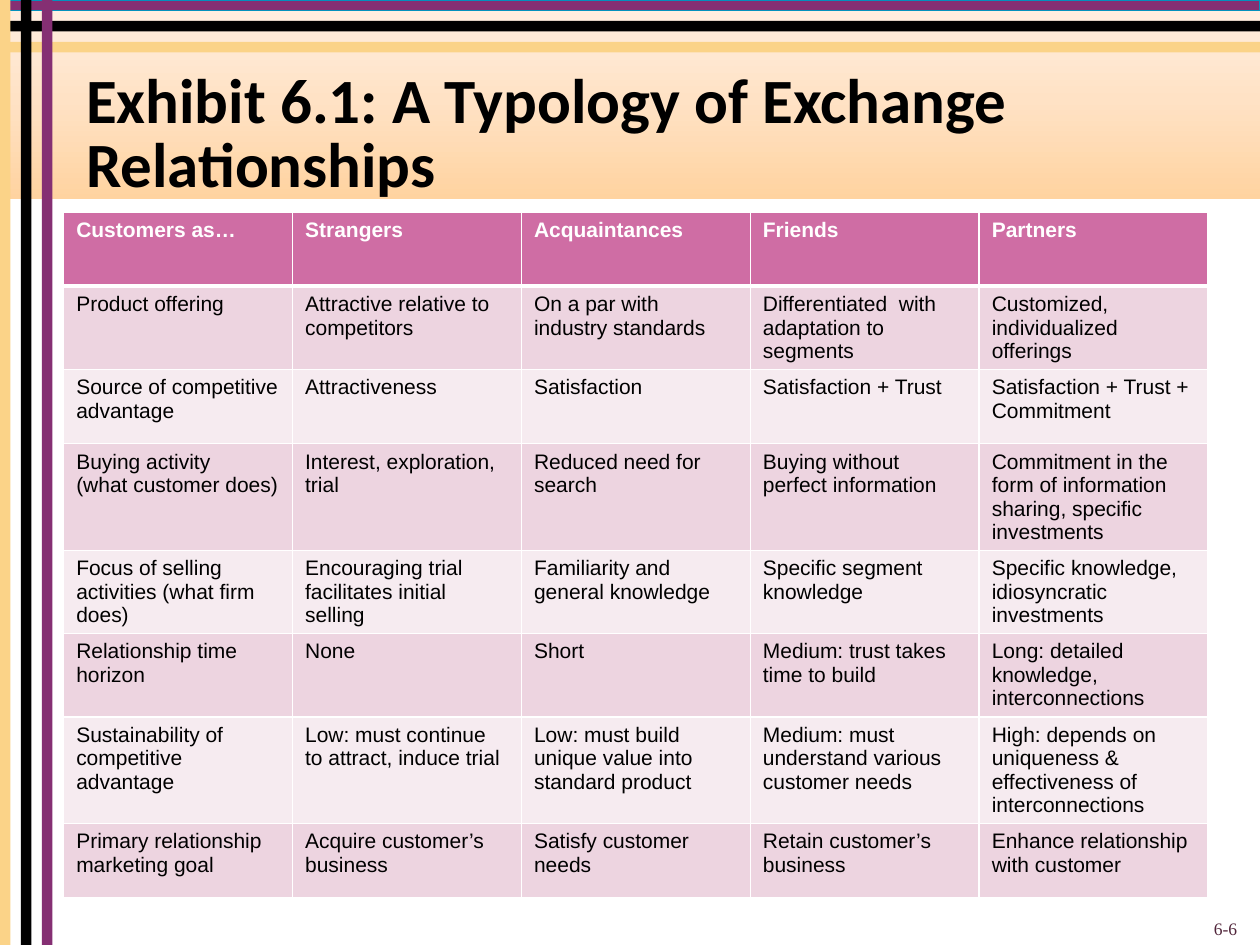
from copy import deepcopy
from dataclasses import dataclass
from typing import Optional

from lxml.etree import SubElement
from pptx import Presentation
from pptx.dml.color import RGBColor
from pptx.enum.text import MSO_ANCHOR, MSO_AUTO_SIZE, PP_ALIGN
from pptx.enum.shapes import MSO_SHAPE
from pptx.oxml.ns import qn
from pptx.util import Pt

SLIDE_WIDTH, SLIDE_HEIGHT = 720, 540
STRIPE = 6
PURPLE, GOLD, BLACK, WHITE = "852F73", "FBD388", "000000", "FFFFFF"
HEADER_FILL, ROW_FILLS = "CF6DA4", ("F6EBF0", "EDD4E0")
COLUMN_WIDTH = 130.8
ROW_HEIGHTS = (42.5, 44.6, 42.5, 57.6, 44.6, 44.6, 57.6, 42.5)

TYPOLOGY = (
    ("Customers as…", "Strangers", "Acquaintances", "Friends", "Partners"),
    ("Product offering", "Attractive relative to competitors",
     "On a par with industry standards",
     "Differentiated  with adaptation to segments",
     "Customized, individualized offerings"),
    ("Source of competitive advantage", "Attractiveness", "Satisfaction",
     "Satisfaction + Trust", "Satisfaction + Trust + Commitment"),
    ("Buying activity\n(what customer does)", "Interest, exploration, trial",
     "Reduced need for search", "Buying without perfect information",
     "Commitment in the form of information sharing, specific investments"),
    ("Focus of selling activities (what firm does)",
     "Encouraging trial facilitates initial selling",
     "Familiarity and general knowledge", "Specific segment knowledge",
     "Specific knowledge,  idiosyncratic investments"),
    ("Relationship time horizon", "None", "Short",
     "Medium: trust takes time to build",
     "Long: detailed knowledge, interconnections"),
    ("Sustainability of competitive advantage",
     "Low: must continue to attract, induce trial",
     "Low: must build unique value into standard product",
     "Medium: must understand various customer needs",
     "High: depends on uniqueness & effectiveness of interconnections"),
    ("Primary relationship marketing goal", "Acquire customer’s business",
     "Satisfy customer needs", "Retain customer’s business",
     "Enhance relationship with customer"),
)


@dataclass
class Band:
    left: float
    top: float
    width: float
    height: float
    color: Optional[str] = None
    outline: Optional[str] = None


BANDS = (
    Band(0, 0, SLIDE_WIDTH, 114),
    Band(0, 0, SLIDE_WIDTH, STRIPE, PURPLE, "0391BD"),
    Band(0, 24, SLIDE_WIDTH, STRIPE, GOLD),
    Band(0, 12, SLIDE_WIDTH, STRIPE, BLACK),
    Band(24, 0, STRIPE, SLIDE_HEIGHT, PURPLE),
    Band(0, 0, STRIPE, SLIDE_HEIGHT, GOLD),
    Band(12, 0, STRIPE, SLIDE_HEIGHT, BLACK),
)


def rgb(color: str) -> RGBColor:
    return RGBColor.from_string(color)


def write_text(frame, text: str, *, size: float, font: str, color: str = BLACK,
               bold: bool = False, align=PP_ALIGN.LEFT, spacing: float = 1.0) -> None:
    frame.word_wrap = True
    frame.text = text
    for paragraph in frame.paragraphs:
        paragraph.alignment = align
        paragraph.line_spacing = spacing
        for run in paragraph.runs:
            run.font.size = Pt(size)
            run.font.name = font
            run.font.bold = bold
            run.font.color.rgb = rgb(color)


def fill_sunrise(shape) -> None:
    shape.fill.gradient()
    shape.fill.gradient_angle = 90
    stop_list = shape._element.spPr.find(".//" + qn("a:gsLst"))
    stop_list.insert(1, deepcopy(stop_list[0]))
    colors = ("FFD3A0", "FFE2C5", "FFF0E3")
    for stop, position, color in zip(shape.fill.gradient_stops, (0, 0.5, 1), colors):
        stop.position = position
        stop.color.rgb = rgb(color)


def draw_band(slide, band: Band) -> None:
    shape = slide.shapes.add_shape(MSO_SHAPE.RECTANGLE, Pt(band.left), Pt(band.top),
                                   Pt(band.width), Pt(band.height))
    shape.shadow.inherit = False
    if band.color:
        shape.fill.solid()
        shape.fill.fore_color.rgb = rgb(band.color)
    else:
        fill_sunrise(shape)
    if band.outline:
        shape.line.color.rgb = rgb(band.outline)
        shape.line.width = Pt(0)
    else:
        shape.line.fill.background()


def draw_borders(cell, top: float, bottom: float) -> None:
    properties = cell._tc.get_or_add_tcPr()
    sides = {"lnL": 1, "lnR": 1, "lnT": top, "lnB": bottom}
    for index, (side, width) in enumerate(sides.items()):
        border = SubElement(properties, qn(f"a:{side}"), w=str(Pt(width)))
        fill = SubElement(border, qn("a:solidFill"))
        SubElement(fill, qn("a:srgbClr"), val=WHITE)
        properties.insert(index, border)


def draw_typology(slide) -> None:
    columns = len(TYPOLOGY[0])
    table = slide.shapes.add_table(len(TYPOLOGY), columns, Pt(36.4), Pt(121),
                                   Pt(COLUMN_WIDTH * columns),
                                   Pt(sum(ROW_HEIGHTS))).table
    for column in table.columns:
        column.width = Pt(COLUMN_WIDTH)
    for row_index, (texts, height) in enumerate(zip(TYPOLOGY, ROW_HEIGHTS)):
        table.rows[row_index].height = Pt(height)
        is_header = row_index == 0
        for column_index, text in enumerate(texts):
            cell = table.cell(row_index, column_index)
            cell.fill.solid()
            cell.fill.fore_color.rgb = rgb(HEADER_FILL if is_header else ROW_FILLS[row_index % 2])
            draw_borders(cell, top=3 if row_index == 1 else 1, bottom=3 if is_header else 1)
            write_text(cell.text_frame, text, size=12, font="Arial",
                       color=WHITE if is_header else BLACK, bold=is_header)


def draw_title(slide) -> None:
    title = slide.shapes.title
    title.left, title.top, title.width, title.height = Pt(42), Pt(42), Pt(666), Pt(72)
    slide.shapes._spTree.append(title._element)
    frame = title.text_frame
    frame.auto_size = MSO_AUTO_SIZE.NONE
    frame.vertical_anchor = MSO_ANCHOR.MIDDLE
    write_text(frame, "Exhibit 6.1: A Typology of Exchange Relationships",
               size=36, font="Calibri", bold=True, spacing=0.85)


def draw_page_number(slide) -> None:
    frame = slide.shapes.add_textbox(Pt(546), Pt(504), Pt(168), Pt(36)).text_frame
    frame.vertical_anchor = MSO_ANCHOR.BOTTOM
    write_text(frame, "6-6", size=10, font="Times New Roman", color="51253A",
               align=PP_ALIGN.RIGHT)


def main() -> None:
    presentation = Presentation()
    presentation.slide_width, presentation.slide_height = Pt(SLIDE_WIDTH), Pt(SLIDE_HEIGHT)
    slide = presentation.slides.add_slide(presentation.slide_layouts[5])
    for band in BANDS:
        draw_band(slide, band)
    draw_title(slide)
    draw_typology(slide)
    draw_page_number(slide)
    presentation.save("out.pptx")


if __name__ == "__main__":
    main()
